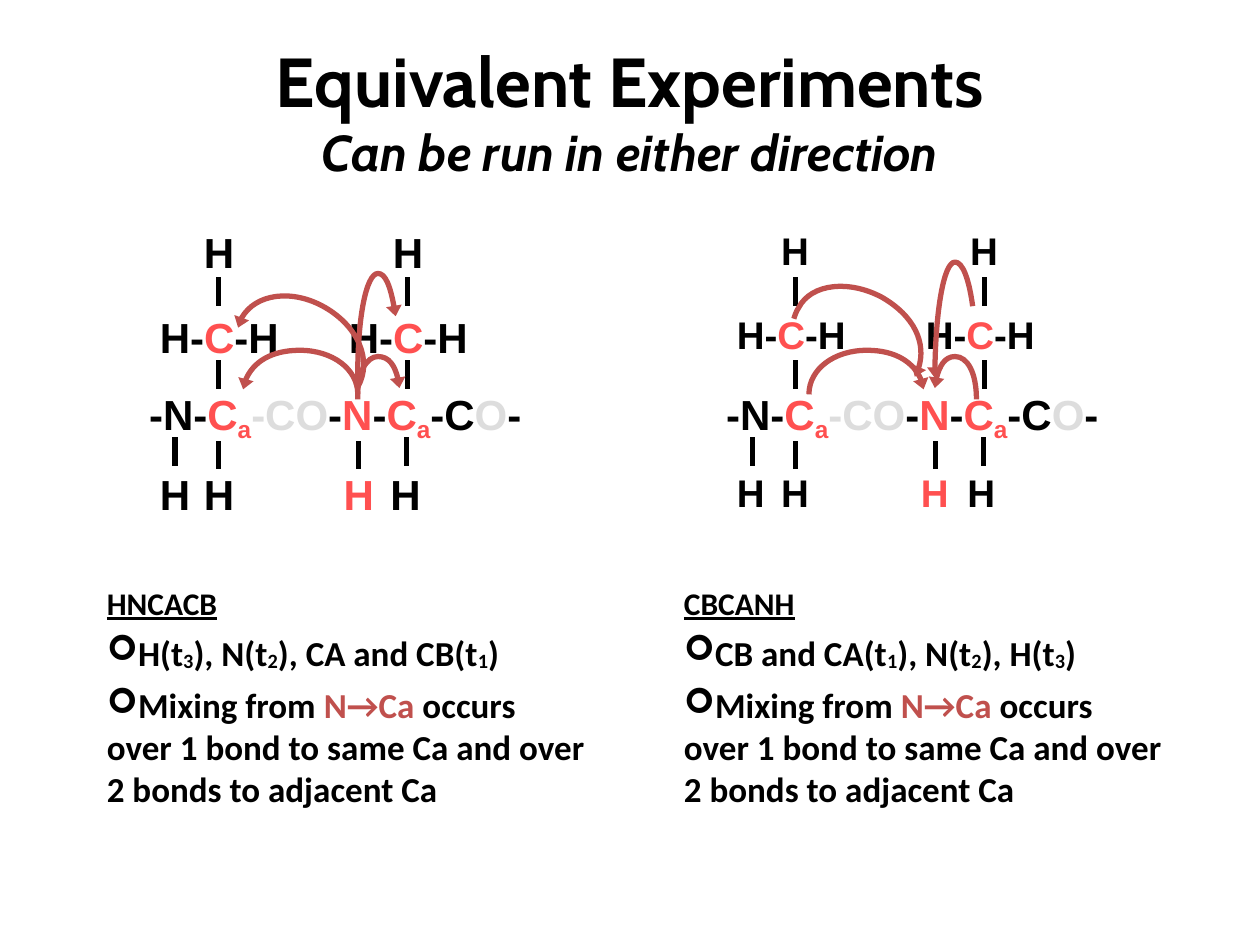
from lxml import etree
from pptx import Presentation
from pptx.dml.color import RGBColor
from pptx.enum.shapes import MSO_CONNECTOR
from pptx.enum.text import MSO_ANCHOR, PP_ALIGN
from pptx.oxml.ns import qn
from pptx.util import Inches, Pt

STRAIGHT = MSO_CONNECTOR.STRAIGHT
MIDDLE = MSO_ANCHOR.MIDDLE
CENTER = PP_ALIGN.CENTER
BLACK, RED, GRAY, BRICK = "000000", "FF5050", "DDDDDD", "C0504D"

prs = Presentation()
prs.slide_width, prs.slide_height = Inches(10), Inches(7.5)
COL, ROW = prs.slide_width / 100, prs.slide_height / 75
s = prs.slides.add_slide(prs.slide_layouts[6])


def add_run(p, text, size, color=BLACK, font="Arial", italic=None, underline=None, base=0):
    r = p.add_run()
    r.text = text
    f = r.font
    f.name, f.size, f.bold = font, Pt(size), True
    f.italic, f.underline = italic, underline
    f.color.rgb = RGBColor.from_string(color)
    if base:
        r._r.get_or_add_rPr().set("baseline", str(base * 1000))


def add_box(x, y, w, h, wrap=True):
    sp = s.shapes.add_textbox(int(x * COL), int(y * ROW), int(w * COL), int(h * ROW))
    sp.text_frame.word_wrap = wrap
    return sp.text_frame


BACKBONE = [("-N-", BLACK, 0), ("C", RED, 0), ("a", RED, -20), ("-CO", GRAY, 0),
            ("-", BLACK, 0), ("N", RED, 0), ("-", BLACK, 0), ("C", RED, 0),
            ("a", RED, -20), ("-C", BLACK, 0), ("O", GRAY, 0), ("-", BLACK, 0)]
METHYLENE = [("H-", BLACK), ("C", RED), ("-H", BLACK)]
BLACK_H, RED_H = [("H", BLACK)], [("H", RED)]
ATOMS = [(11.7, 36.7, BLACK_H), (15.2, 36.7, BLACK_H), (26.3, 36.7, RED_H),
         (30, 36.7, BLACK_H), (15.2, 17.5, BLACK_H), (30.2, 17.5, BLACK_H),
         (11.7, 24.2, METHYLENE), (26.7, 24.2, METHYLENE)]
BONDS = [(13.9, 34.7), (32.25, 34.7), (17.35, 35), (28.45, 35),
         (17.35, 28.6), (32.35, 28.6), (17.35, 22), (32.35, 22)]
BOND_ROWS = 2.25

LEFT_ARCS = [
    [(31.7, 30.8), (31.6, 29.4), (30.9, 28.3), (30, 28.3), (29.1, 28.3), (28.3, 29.6), (28.4, 31.7)],
    [(19.3, 30.9), (19.5, 29.1), (21.5, 27.8), (23.8, 27.8), (26.4, 27.8), (28.4, 29.3), (28.4, 31.3)],
    [(18.9, 26), (18.9, 25.7), (19, 25.5), (19.2, 25.2), (20.3, 23.3), (23.2, 22.9), (25.8, 24.4),
     (28.4, 25.9), (29.6, 28.6), (28.4, 30.7)],
    [(31.4, 25.1), (31.1, 23), (30.6, 21.7), (30, 21.7), (29.1, 21.7), (28.3, 25.1), (28.4, 30.8)],
]
RIGHT_ARCS = [
    [(74.2, 30.8), (74.3, 29.4), (75, 28.3), (75.8, 28.3), (76.8, 28.3), (77.5, 29.6), (77.5, 31.7)],
    [(73.3, 30.9), (73.1, 29.1), (71.1, 27.8), (68.8, 27.8), (66.2, 27.8), (64.2, 29.3), (64.2, 31.3)],
    [(74.2, 30), (74.2, 25.1), (74.9, 20.8), (75.8, 20.8), (76.4, 20.8), (76.9, 22.1), (77.2, 24.3)],
    [(72.6, 29.9), (73.8, 27.8), (72.6, 25.1), (70, 23.6), (67.4, 22.2), (64.4, 22.5), (63.4, 24.4),
     (63.2, 24.7), (63.1, 25), (63, 25.3)],
]
PANELS = [
    (45.8, 22, (4.2, 10.7, 4.7), "CBCANH",
     ["CB and CA(t", "1", "), N(t", "2", "), H(t", "3", ")"], RIGHT_ARCS),
    (0, 24, (4.4, 11.6, 5), "HNCACB",
     ["H(t", "3", "), N(t", "2", "), CA and CB(t", "1", ")"], LEFT_ARCS),
]
MIXING = [("Mixing from ", BLACK), ("N→Ca", BRICK),
          (" occurs over 1 bond to same Ca and over 2 bonds to adjacent Ca", BLACK)]

for dx, size, (narrow, wide, high), heading, transfer, arcs in PANELS:
    p = add_box(10.85 + dx, 30.35, 32.2, 5, wrap=False).paragraphs[0]
    for text, color, base in BACKBONE:
        add_run(p, text, 24, color, base=base)

    for x, y, parts in ATOMS:
        w = narrow if len(parts) == 1 else wide
        p = add_box(x + dx, y, w, high, wrap=False).paragraphs[0]
        for text, color in parts:
            add_run(p, text, size, color)

    for x, y in BONDS:
        x = int((x + dx) * COL)
        c = s.shapes.add_connector(STRAIGHT, x, int(y * ROW), x, int((y + BOND_ROWS) * ROW))
        c.line.width = Pt(3)
        c.line.color.rgb = RGBColor.from_string(BLACK)
        etree.SubElement(c._element.spPr, qn("a:effectLst"))

    tf = add_box(7.5 + dx, 45.85, 40, 19.4)
    p = tf.paragraphs[0]
    p.space_after = Pt(5.4)
    add_run(p, heading, 18, font="Calibri", underline=True)
    steps = [(text, BLACK, -8 * (i % 2)) for i, text in enumerate(transfer)]
    for parts in (steps, [(text, color, 0) for text, color in MIXING]):
        p = tf.add_paragraph()
        p.space_after = Pt(6)
        pPr = p._p.get_or_add_pPr()
        etree.SubElement(pPr, qn("a:buFont")).set("typeface", "Wingdings")
        etree.SubElement(pPr, qn("a:buChar")).set("char", "➢")
        for text, color, base in parts:
            add_run(p, text, 20, color, font="Calibri", base=base)

    for arc in arcs:
        pts = [(x * COL, y * ROW) for x, y in arc]
        fb = s.shapes.build_freeform(*pts[0])
        fb.add_line_segments(pts[1:], close=False)
        sp = fb.convert_to_shape()
        segments = list(sp._element.iter(qn("a:lnTo")))
        for i in range(0, len(segments), 3):
            curve = etree.SubElement(segments[i].getparent(), qn("a:cubicBezTo"))
            for segment in segments[i:i + 3]:
                curve.append(segment[0])
                segment.getparent().remove(segment)
        sp.shadow.inherit = False
        sp.fill.background()
        sp.line.width = Pt(3)
        sp.line.color.rgb = RGBColor.from_string(BRICK)
        head = etree.SubElement(sp.line._get_or_add_ln(), qn("a:headEnd"))
        head.set("type", "triangle")
        head.set("len", "sm")

tf = add_box(7.5, 2.5, 85, 12.5)
tf.vertical_anchor = MIDDLE
p = tf.paragraphs[0]
p.alignment = CENTER
add_run(p, "Equivalent Experiments", 39.6, font="Cabin")
p.add_line_break()
add_run(p, "Can be run in either direction", 28.8, font="Cabin", italic=True)

prs.save("out.pptx")
